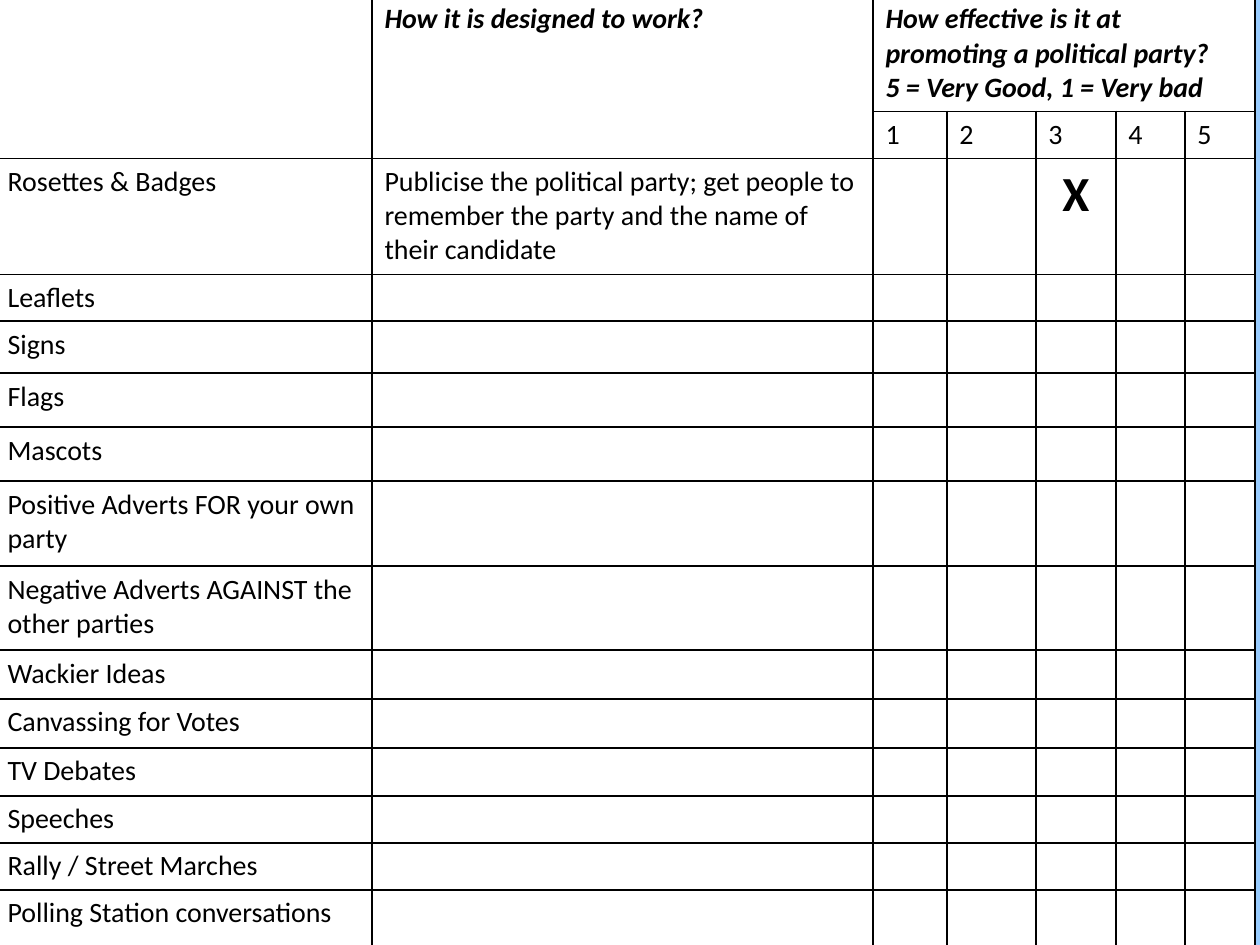
import pptx
import pptx.dml.color
import pptx.enum.text
import pptx.oxml
import pptx.oxml.ns
import pptx.util

PX = 914400 // 126
BLACK = pptx.dml.color.RGBColor(0, 0, 0)
WHITE = pptx.dml.color.RGBColor(255, 255, 255)
SKY = pptx.dml.color.RGBColor(0x99, 0xCC, 0xFF)

COLUMN_WIDTHS = [377, 501, 74, 89, 80, 69, 70]
ROW_HEIGHTS = [115, 47, 116, 46, 52, 54, 54, 85, 84, 49, 49, 48, 47, 47, 58]
METHODS = [
    "Rosettes & Badges", "Leaflets", "Signs", "Flags", "Mascots",
    "Positive Adverts FOR your own party",
    "Negative Adverts AGAINST the other parties",
    "Wackier Ideas", "Canvassing for Votes", "TV Debates", "Speeches",
    "Rally / Street Marches", "Polling Station conversations",
]
HEADING = {"bold": True, "italic": True}
MARK = {"bold": True, "size": pptx.util.Pt(28)}


class Worksheet:
    """Holds the text style and the current slide, and adds elements to it."""

    body = {"name": "Calibri", "size": pptx.util.Pt(16), "bold": False, "italic": False}

    def __init__(self, presentation, background):
        self.slide = presentation.slides.add_slide(presentation.slide_layouts[6])
        self.slide.background.fill.solid()
        self.slide.background.fill.fore_color.rgb = background

    def table(self, left, top, widths, heights):
        shape = self.slide.shapes.add_table(
            len(heights), len(widths), left * PX, top * PX,
            sum(widths) * PX, sum(heights) * PX)
        table = shape.table
        table.first_row = table.horz_banding = False
        for column, width in zip(table.columns, widths):
            column.width = width * PX
        for row, height in zip(table.rows, heights):
            row.height = height * PX
            for cell in row.cells:
                self.cell(cell)
        return table

    def cell(self, cell):
        properties = cell._tc.get_or_add_tcPr()
        for side in "LRTB":
            properties.append(pptx.oxml.parse_xml(
                f'<a:ln{side} {pptx.oxml.ns.nsdecls("a")} w="12700">'
                f'<a:solidFill><a:srgbClr val="{BLACK}"/></a:solidFill></a:ln{side}>'))
        cell.fill.solid()
        cell.fill.fore_color.rgb = WHITE
        cell.text_frame.paragraphs[0]._p.append(pptx.oxml.parse_xml(
            f'<a:endParaRPr {pptx.oxml.ns.nsdecls("a")} sz="1600"/>'))

    def text(self, cell, lines, style={}, alignment=pptx.enum.text.PP_ALIGN.LEFT):
        paragraph = cell.text_frame.paragraphs[0]
        paragraph.alignment = alignment
        for index, line in enumerate(lines):
            if index:
                paragraph.add_line_break()
            run = paragraph.add_run()
            run.text = line
            for name, value in {**self.body, **style}.items():
                setattr(run.font, name, value)
            run.font.color.rgb = BLACK


def main():
    presentation = pptx.Presentation()
    presentation.slide_width = pptx.util.Inches(10)
    presentation.slide_height = pptx.util.Inches(7.5)
    sheet = Worksheet(presentation, SKY)
    table = sheet.table(-5, -4, COLUMN_WIDTHS, ROW_HEIGHTS)

    for column in (0, 1):
        table.cell(0, column).merge(table.cell(1, column))
    table.cell(0, 2).merge(table.cell(0, 6))

    sheet.text(table.cell(0, 1), ["How it is designed to work?"], HEADING)
    sheet.text(table.cell(0, 2), [
        "How effective is it at promoting a political party? ",
        "5 = Very Good, 1 = Very bad"], HEADING)
    for score in range(1, 6):
        sheet.text(table.cell(1, score + 1), [str(score)])
    for row, method in enumerate(METHODS, start=2):
        sheet.text(table.cell(row, 0), [method])
    sheet.text(table.cell(2, 1), [
        "Publicise the political party; get people to remember the party "
        "and the name of their candidate"])
    sheet.text(table.cell(2, 4), ["X"], MARK, pptx.enum.text.PP_ALIGN.CENTER)
    presentation.save("out.pptx")


if __name__ == "__main__":
    main()
